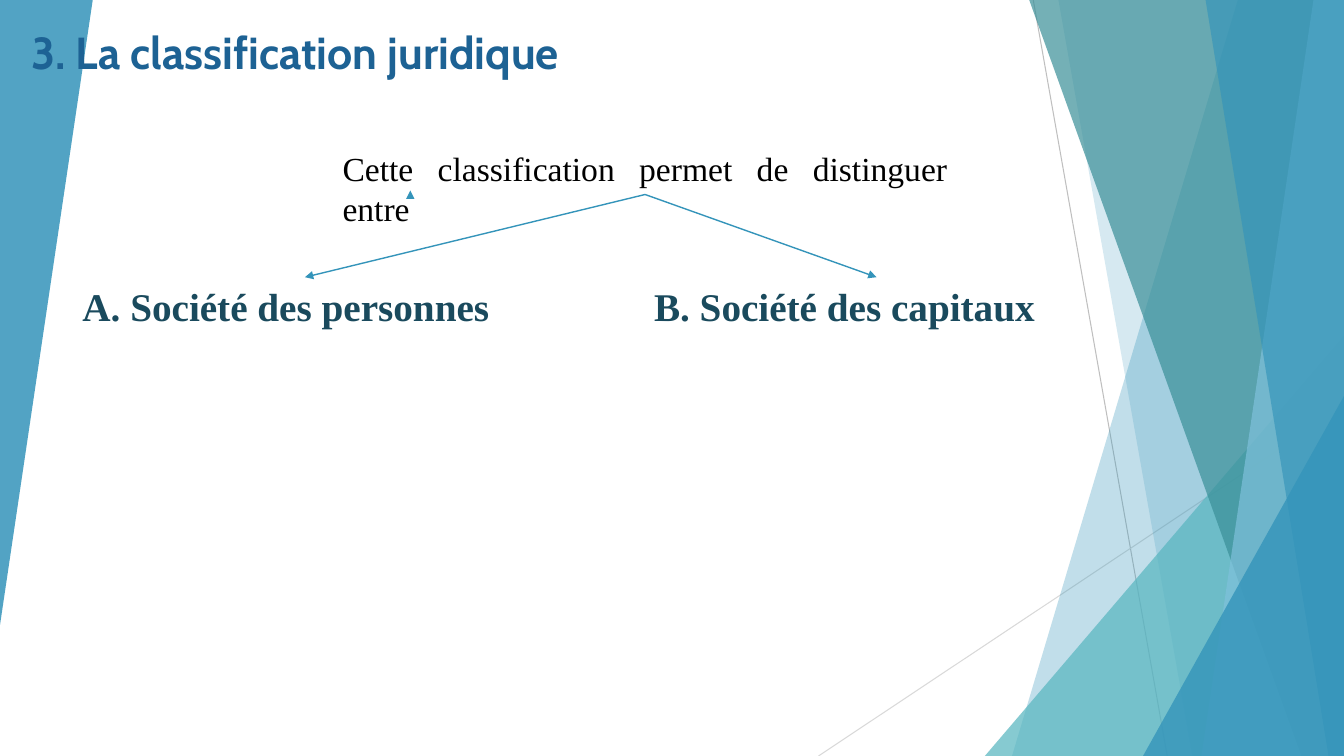
import pptx
import pptx.dml.color
import pptx.enum.shapes
import pptx.enum.text
import pptx.oxml.ns
import pptx.oxml.xmlchemy
import pptx.util

RGBColor = pptx.dml.color.RGBColor
BLUE = RGBColor(0x34, 0x94, 0xBA)
LIGHT_BLUE = RGBColor(0x7F, 0xC1, 0xDB)
TURQUOISE = RGBColor(0x58, 0xB6, 0xC0)
TEAL = RGBColor(0x3A, 0x8F, 0x98)
GREY = RGBColor(0xBF, 0xBF, 0xBF)
LIGHT_GREY = RGBColor(0xD9, 0xD9, 0xD9)
TITLE_BLUE = RGBColor(0x1D, 0x62, 0x94)
LABEL_BLUE = RGBColor(0x1A, 0x4A, 0x5D)
BLACK = RGBColor(0, 0, 0)


def write_text(shape, text, *, size, color, font="Times New Roman", bold=False,
               align=pptx.enum.text.PP_ALIGN.LEFT):
    frame = shape.text_frame
    frame.word_wrap = True
    paragraph = frame.paragraphs[0]
    paragraph.text = text
    paragraph.alignment = align
    paragraph.font.name = font
    paragraph.font.size = pptx.util.Pt(size)
    paragraph.font.bold = bold
    paragraph.font.color.rgb = color


def append_element(parent, tag, **attributes):
    element = pptx.oxml.xmlchemy.OxmlElement(tag)
    for name, value in attributes.items():
        element.set(name, value)
    parent.append(element)


class SlideBuilder:
    """Places elements by percentages of the slide's width and height."""

    def __init__(self, presentation):
        self.width = presentation.slide_width
        self.height = presentation.slide_height
        self.slide = presentation.slides.add_slide(presentation.slide_layouts[6])
        self.shapes = self.slide.shapes

    def point(self, across, down):
        return round(self.width * across / 100), round(self.height * down / 100)

    def paint(self, shape, color, opacity):
        shape.shadow.inherit = False
        shape.line.fill.background()
        shape.fill.solid()
        shape.fill.fore_color.rgb = color
        solid_fill = shape._element.spPr.find(pptx.oxml.ns.qn("a:solidFill"))
        append_element(solid_fill[0], "a:alpha", val=str(opacity * 1000))

    def ribbon(self, top, bottom, color, opacity):
        builder = self.shapes.build_freeform(*self.point(top, 0))
        corners = [(100, 0), (100, 100), (bottom, 100)]
        builder.add_line_segments([self.point(*corner) for corner in corners])
        self.paint(builder.convert_to_shape(), color, opacity)

    def triangle(self, left, top, width, height, color, opacity, rotation=0):
        shape = self.shapes.add_shape(
            pptx.enum.shapes.MSO_SHAPE.ISOSCELES_TRIANGLE,
            *self.point(left, top), *self.point(width, height))
        shape.adjustments[0] = 1
        shape.rotation = rotation
        self.paint(shape, color, opacity)

    def text(self, left, top, width, height, text, **text_format):
        shape = self.shapes.add_textbox(
            *self.point(left, top), *self.point(width, height))
        write_text(shape, text, **text_format)
        return shape

    def line(self, start, end, color, weight=0.75):
        connector = self.shapes.add_connector(
            pptx.enum.shapes.MSO_CONNECTOR.STRAIGHT,
            *self.point(*start), *self.point(*end))
        connector.line.color.rgb = color
        connector.line.width = pptx.util.Pt(weight)
        append_element(connector._element.spPr, "a:effectLst")
        return connector

    def arrow(self, start, end):
        connector = self.line(start, end, BLUE, 1)
        outline = connector._element.spPr.find(pptx.oxml.ns.qn("a:ln"))
        append_element(outline, "a:tailEnd", type="triangle")
        return connector

    def branch(self, parent, child):
        connector = self.arrow((0, 0), (0, 0))
        connector.begin_connect(parent, 2)
        connector.end_connect(child, 0)


def draw_background(builder):
    builder.line((76.88, 0), (86.85, 100), GREY)
    builder.line((100, 53.73), (60.9, 100), LIGHT_GREY)
    builder.ribbon(92.1, 75.3, BLUE, 30)
    builder.ribbon(78.75, 88.73, BLUE, 20)
    builder.triangle(73.28, 44.4, 26.72, 55.6, TURQUOISE, 72)
    builder.ribbon(76.58, 96.83, TEAL, 70)
    builder.ribbon(97.73, 89.4, LIGHT_BLUE, 70)
    builder.ribbon(89.7, 98.85, BLUE, 65)
    builder.triangle(85.05, 52.4, 14.95, 47.6, BLUE, 80)
    builder.triangle(0, 0, 6.9, 82.67, BLUE, 85, rotation=180)


def draw_classification(builder):
    builder.text(1.58, 2.67, 46.28, 8.53, "3. La classification juridique",
                 size=32, color=TITLE_BLUE, font="Cabin", bold=True)
    introduction = builder.text(
        24.75, 18.93, 46.5, 6.8, "Cette classification permet de distinguer entre",
        size=24, color=BLACK, align=pptx.enum.text.PP_ALIGN.JUSTIFY)
    builder.arrow((30.53, 25.73), (30.53, 25.2))
    for left, label in [(5.4, "A. Société des personnes"),
                        (47.93, "B. Société des capitaux")]:
        category = builder.text(left, 36.67, 34.58, 7.6, label,
                                size=28, color=LABEL_BLUE, bold=True)
        builder.branch(introduction, category)


def main():
    presentation = pptx.Presentation()
    presentation.slide_width = pptx.util.Inches(13.33)
    presentation.slide_height = pptx.util.Inches(7.5)
    builder = SlideBuilder(presentation)
    draw_background(builder)
    draw_classification(builder)
    presentation.save("out.pptx")


if __name__ == "__main__":
    main()
